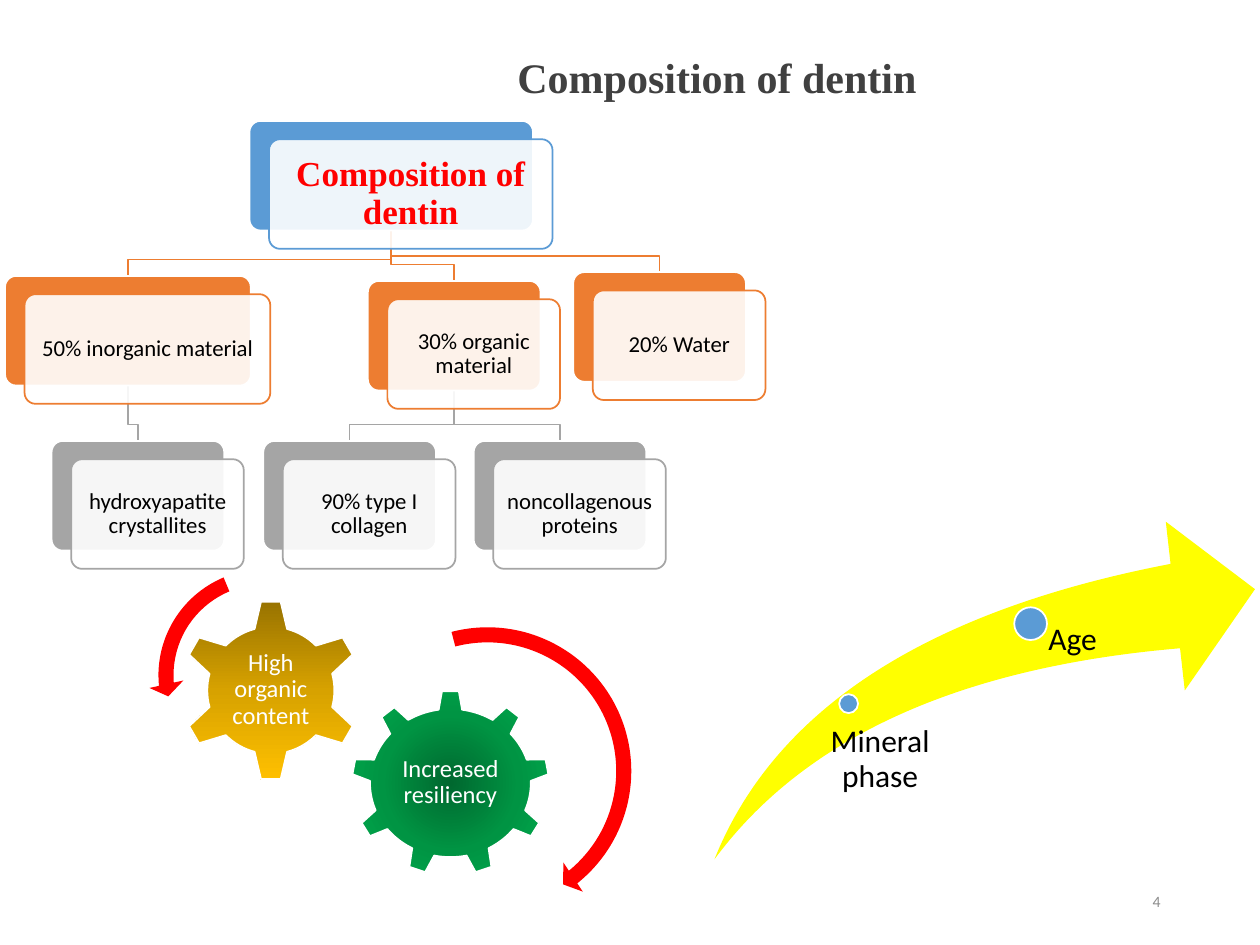
from lxml import etree
from pptx import Presentation, util as u
from pptx.dml.color import RGBColor
from pptx.enum import shapes, text
from pptx.oxml import parse_xml
from pptx.oxml.ns import nsdecls, qn

I = u.Inches
KIND = shapes.MSO_SHAPE
ALIGN = text.PP_ALIGN
MID, TOP = text.MSO_ANCHOR.MIDDLE, text.MSO_ANCHOR.TOP

deck = Presentation()
deck.slide_width, deck.slide_height = I(10), I(7.5)
slide = deck.slides.add_slide(deck.slide_layouts[6])
draw = slide.shapes
hue = RGBColor.from_string


def add(kind, box, fill=None, line=None, adj=()):
    shape = draw.add_shape(kind, *map(I, box))
    shape.shadow.inherit = False
    if fill:
        shape.fill.solid()
        shape.fill.fore_color.rgb = hue(fill)
    if line:
        shape.line.color.rgb = hue(line)
        shape.line.width = u.Pt(1)
    else:
        shape.line.fill.background()
    for i, val in enumerate(adj):
        shape.adjustments[i] = val
    return shape


def write(words, box, size, color="000000", font="Calibri", bold=False,
          align=ALIGN.CENTER, anchor=MID, pad=(0.1, 0.05, 0.1, 0.05),
          wrap=True, gap=0.9):
    frame = draw.add_textbox(*map(I, box)).text_frame
    left, top, right, low = map(I, pad)
    look = {"word_wrap": wrap, "vertical_anchor": anchor, "margin_left": left,
            "margin_top": top, "margin_right": right, "margin_bottom": low}
    for key, val in look.items():
        setattr(frame, key, val)
    par = frame.paragraphs[0]
    par.alignment, par.line_spacing = align, gap
    run = par.add_run()
    run.text = words
    for key, val in {"size": u.Pt(size), "name": font, "bold": bold}.items():
        setattr(run.font, key, val)
    run.font.color.rgb = hue(color)


# Tree of cards: left, top, width, color, parent, words
BLUE, ORANGE, GRAY = "5B9BD5", "ED7D31", "A5A5A5"
high, corner = 0.87, [0.1]
cards = [
    (1.98, 0.96, 2.25, BLUE, None, "Composition of dentin"),
    (0.04, 2.19, 1.95, ORANGE, 0, "50% inorganic material"),
    (0.41, 3.5, 1.37, GRAY, 1, "hydroxyapatite crystallites"),
    (2.92, 2.23, 1.37, ORANGE, 0, "30% organic material"),
    (2.09, 3.5, 1.37, GRAY, 3, "90% type I collagen"),
    (3.76, 3.5, 1.37, GRAY, 3, "noncollagenous proteins"),
    (4.55, 2.16, 1.37, ORANGE, 0, "20% Water"),
]

for left, top, wide, color, up, words in cards[1:]:
    pleft, ptop, pwide = cards[up][:3]
    start, end, bend = pleft + pwide / 2, left + wide / 2, top - 0.13
    pen = draw.build_freeform(I(start), I(ptop + high))
    pen.add_line_segments(
        [(I(x), I(y)) for x, y in ((start, bend), (end, bend), (end, top))],
        close=False)
    link = pen.convert_to_shape()
    link.shadow.inherit = False
    link.fill.background()
    link.line.color.rgb = hue(color)
    link.line.width = u.Pt(1)

for left, top, wide, color, up, words in cards:
    add(KIND.ROUNDED_RECTANGLE, (left, top, wide, high), color, "FFFFFF", corner)
    front = add(KIND.ROUNDED_RECTANGLE, (left + 0.155, top + 0.145, wide, high),
                "FFFFFF", color, corner)
    tint = front.fill._xPr.find(".//" + qn("a:srgbClr"))
    etree.SubElement(tint, qn("a:alpha"), val="90000")
    root = up is None
    form = {"size": 20, "color": "FF0000", "font": "Times New Roman",
            "bold": True} if root else {"size": 13}
    write(words, (left + 0.18, top + 0.17, wide - 0.05, high - 0.05),
          pad=[0.08 if root else 0.05] * 4, **form)

write("Composition of dentin", (3.99, 0.36, 3.4, 0.5), 24, "404040",
      "Times New Roman", True, anchor=TOP, wrap=False, gap=1)

# Age arrow
add(KIND.SWOOSH_ARROW, (5.67, 4.14, 4.29, 2.68), "FFFF00", adj=(0.25, 0.25))
add(KIND.OVAL, (6.66, 5.51, 0.15, 0.15), BLUE, "FFFFFF")
write("Mineral phase", (6.34, 5.76, 1.21, 0.59), 18, anchor=TOP,
      pad=(0.08, 0, 0, 0))
add(KIND.OVAL, (8.05, 4.82, 0.26, 0.26), BLUE, "FFFFFF")
write("Age", (8.18, 4.95, 1.39, 1.78), 18, align=ALIGN.LEFT, anchor=TOP,
      pad=(0.14, 0, 0, 0))

# Gears
RADIAL = ('<a:path path="circle"><a:fillToRect l="50000" t="50000" '
          'r="50000" b="50000"/></a:path>')
LINEAR = '<a:lin ang="5400000" scaled="0"/>'
gears = [
    (KIND.GEAR_9, (2.79, 5.48, 1.57, 1.47), ("00682F", "009443", "00B050"),
     RADIAL, "Increased resiliency", (3.1, 5.83, 0.95, 0.76)),
    (KIND.GEAR_6, (1.43, 4.76, 1.44, 1.44), ("977200", "D7A200", "FFC000"),
     LINEAR, "High organic content", (1.79, 5.12, 0.72, 0.71)),
]
for kind, box, tones, way, words, area in gears:
    gear = add(kind, box, tones[1], "FFFFFF")
    stops = "".join(
        f'<a:gs pos="{i * 50000}"><a:srgbClr val="{tone}"/></a:gs>'
        for i, tone in enumerate(tones))
    props = gear.fill._xPr
    props.replace(props.find(qn("a:solidFill")), parse_xml(
        f'<a:gradFill {nsdecls("a")} rotWithShape="1">'
        f'<a:gsLst>{stops}</a:gsLst>{way}</a:gradFill>'))
    write(words, area, 14, "FFFFFF", pad=[0.02] * 4)

add(KIND.CIRCULAR_ARROW, (2.65, 4.9, 2.44, 2.44), "FF0000",
    adj=(0.049, 3.126, 30.661, 153.289, 0.057))
add(KIND.LEFT_CIRCULAR_ARROW, (1.18, 4.44, 1.84, 1.84), "FF0000",
    adj=(0.065, 4.3, 104.891, 148.378, 0.075))

write("4", (7.06, 6.95, 2.25, 0.4), 9, "8C8C8C", align=ALIGN.RIGHT, gap=1)

deck.save("out.pptx")
